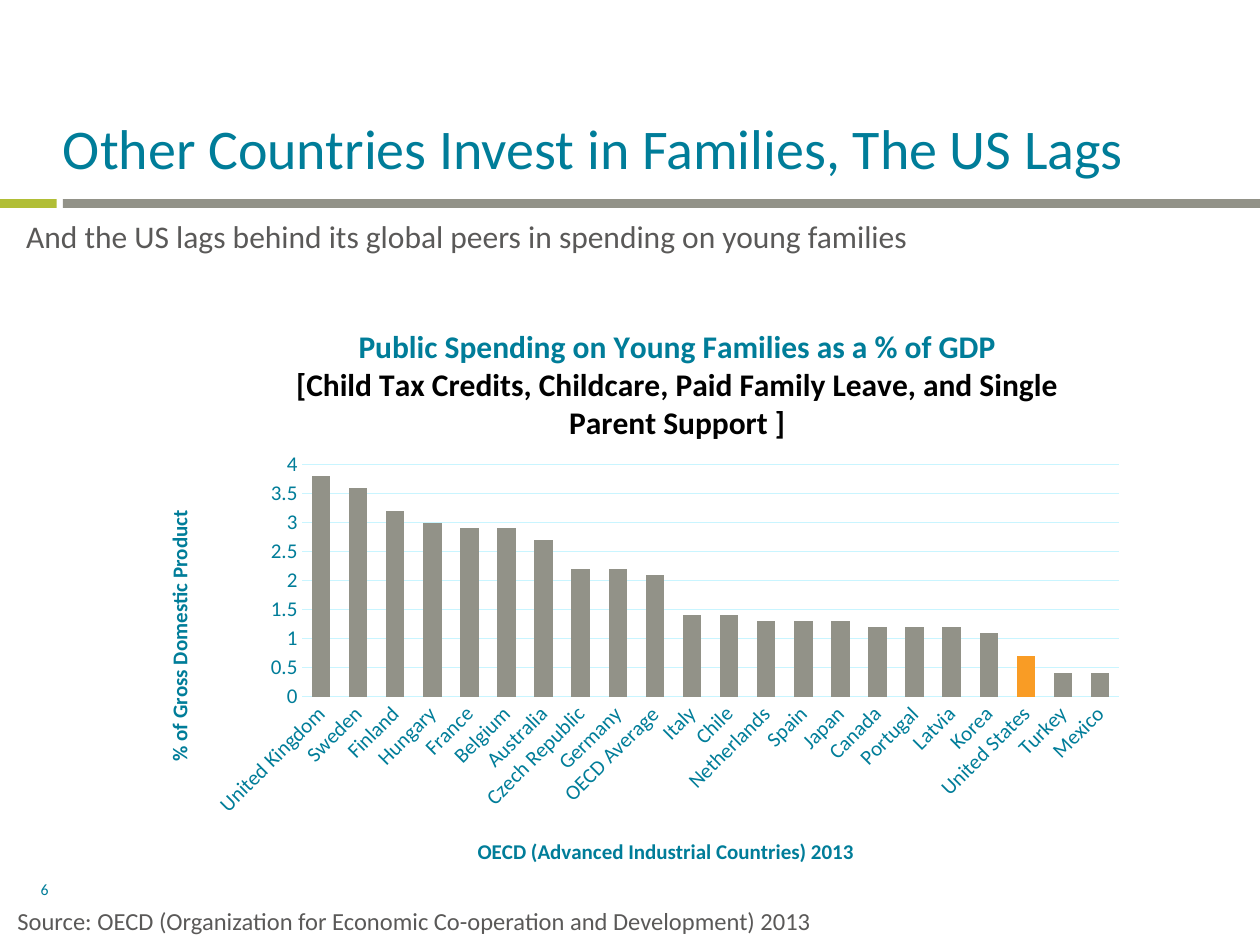
import pptx
import pptx.chart.data
import pptx.dml.color
import pptx.enum.chart
import pptx.enum.shapes
import pptx.enum.text
import pptx.oxml
import pptx.oxml.ns
import pptx.util

RGB = pptx.dml.color.RGBColor
TEAL = RGB(0x00, 0x7D, 0x99)
GRAY = RGB(0x92, 0x92, 0x88)
GREEN = RGB(0xB1, 0xBE, 0x36)
ORANGE = RGB(0xF9, 0x9C, 0x25)
DARK = RGB(0x5A, 0x59, 0x58)
PALE = RGB(0xC9, 0xF5, 0xFF)
BLACK = RGB(0, 0, 0)
FONT = "Calibri"
WIDTH, HEIGHT = 10, 7.5
MARGIN = 0.5

SPENDING = {
    "United Kingdom": 3.8, "Sweden": 3.6, "Finland": 3.2, "Hungary": 3.0,
    "France": 2.9, "Belgium": 2.9, "Australia": 2.7, "Czech Republic": 2.2,
    "Germany": 2.2, "OECD Average": 2.1, "Italy": 1.4, "Chile": 1.4,
    "Netherlands": 1.3, "Spain": 1.3, "Japan": 1.3, "Canada": 1.2,
    "Portugal": 1.2, "Latvia": 1.2, "Korea": 1.1, "United States": 0.7,
    "Turkey": 0.4, "Mexico": 0.4,
}
HIGHLIGHT = "United States"


def inches(box):
    return [pptx.util.Inches(length) for length in box]


def style(font, size, color, bold=False):
    font.name = FONT
    font.size = pptx.util.Pt(size)
    font.color.rgb = color
    font.bold = bold


def add_text(slide, box, text, size, color, inset=True,
             anchor=pptx.enum.text.MSO_ANCHOR.TOP):
    frame = slide.shapes.add_textbox(*inches(box)).text_frame
    frame.word_wrap = True
    frame.vertical_anchor = anchor
    if not inset:
        frame.margin_left = frame.margin_right = 0
        frame.margin_top = frame.margin_bottom = 0
    frame.text = text
    style(frame.paragraphs[0].runs[0].font, size, color)
    return frame.paragraphs[0]


def add_rule(slide, box):
    """Divider with a green tab in the margin and a gray bar beside it."""
    left, top, width, height = box
    for x, length, color in ((left, MARGIN - 0.05, GREEN),
                             (left + MARGIN, width - MARGIN, GRAY)):
        bar = slide.shapes.add_shape(pptx.enum.shapes.MSO_SHAPE.RECTANGLE,
                                     *inches((x, top, length, height)))
        bar.shadow.inherit = False
        bar.fill.solid()
        bar.fill.fore_color.rgb = color
        bar.line.fill.background()


def set_layout(element, index, **shares):
    """Fix a chart part's place, in shares of the chart's size."""
    layout = element.find(pptx.oxml.ns.qn("c:layout"))
    if layout is not None:
        element.remove(layout)
    target = '<c:layoutTarget val="inner"/>' if "w" in shares else ""
    modes = "".join(f'<c:{key}Mode val="edge"/>' for key in "xy")
    values = "".join(f'<c:{key} val="{share}"/>' for key, share in shares.items())
    element.insert(index, pptx.oxml.parse_xml(
        f'<c:layout {pptx.oxml.ns.nsdecls("c")}><c:manualLayout>'
        f'{target}{modes}{values}</c:manualLayout></c:layout>'))


def set_title(title, lines, size, colors, x, y):
    frame = title.text_frame
    frame.text = lines[0]
    for line in lines[1:]:
        frame.add_paragraph().text = line
    for paragraph, color in zip(frame.paragraphs, colors):
        style(paragraph.runs[0].font, size, color, bold=True)
    set_layout(title.element, 1, x=x, y=y)
    return frame


def style_axis(axis):
    axis.major_tick_mark = axis.minor_tick_mark = pptx.enum.chart.XL_TICK_MARK.NONE
    style(axis.tick_labels.font, 12, TEAL)


def set_line(line):
    line.color.rgb = PALE
    line.width = pptx.util.Pt(0.75)


def add_spending_chart(slide, box):
    data = pptx.chart.data.CategoryChartData()
    data.categories = list(SPENDING)
    data.add_series("Series 1", list(SPENDING.values()))
    chart = slide.shapes.add_chart(
        pptx.enum.chart.XL_CHART_TYPE.COLUMN_CLUSTERED, *inches(box), data).chart
    style(chart.font, 10, BLACK)
    chart.has_legend = False
    set_title(chart.chart_title,
              ["Public Spending on Young Families as a % of GDP",
               "[Child Tax Credits, Childcare, Paid Family Leave, and Single "
               "Parent Support ]"], 18, (TEAL, BLACK), 0.16, 0.05)

    countries = chart.category_axis
    style_axis(countries)
    set_line(countries.format.line)
    countries.tick_labels.font._element.getparent().getparent().getparent()
    labels = countries._element.find(pptx.oxml.ns.qn("c:txPr"))
    labels.find(pptx.oxml.ns.qn("a:bodyPr")).set("rot", "-2700000")
    set_title(countries.axis_title, ["OECD (Advanced Industrial Countries) 2013"],
              12, (TEAL,), 0.34, 0.91)

    percent = chart.value_axis
    style_axis(percent)
    percent.minimum_scale, percent.maximum_scale = 0, 4
    percent.major_unit = 0.5
    percent.tick_labels.number_format = "General"
    percent.tick_labels.number_format_is_linked = False
    percent.format.line.fill.background()
    set_line(percent.major_gridlines.format.line)
    frame = set_title(percent.axis_title, ["% of Gross Domestic Product"],
                      12, (TEAL,), 0.03, 0.36)
    frame._txBody.bodyPr.set("rot", "-5400000")

    plot = chart.plots[0]
    plot.gap_width, plot.overlap = 100, -24
    plot.vary_by_categories = False
    series = plot.series[0]
    highlighted = series.points[list(SPENDING).index(HIGHLIGHT)]
    for bars, color in ((series, GRAY), (highlighted, ORANGE)):
        bars.format.fill.solid()
        bars.format.fill.fore_color.rgb = color
    plot_area = chart._chartSpace.chart.plotArea
    set_layout(plot_area, 0, x=0.17, y=0.29, w=0.81, h=0.39)


def main():
    deck = pptx.Presentation()
    deck.slide_width, deck.slide_height = inches((WIDTH, HEIGHT))
    slide = deck.slides.add_slide(deck.slide_layouts[6])
    anchors = pptx.enum.text.MSO_ANCHOR

    add_rule(slide, (0, 1.58, WIDTH, 0.07))
    number = add_text(slide, (0.28, 6.96, 0.15, 0.19), "6", 9, TEAL,
                      inset=False, anchor=anchors.MIDDLE)
    number.alignment = pptx.enum.text.PP_ALIGN.CENTER
    headline = add_text(slide, (MARGIN, 0.36, WIDTH - 2 * MARGIN, 1.08),
                        "Other Countries Invest in Families, The US Lags",
                        32, TEAL, inset=False, anchor=anchors.BOTTOM)
    headline.line_spacing = 0.9
    add_spending_chart(slide, (1.04, 2.32, 0.8 * WIDTH, 4.72))
    add_text(slide, (0.04, 7.14, WIDTH - 0.04, 0.34),
             "Source: OECD (Organization for Economic Co-operation and "
             "Development) 2013", 14, DARK)
    add_text(slide, (0.11, 1.67, WIDTH - 0.11, 0.4),
             "And the US lags behind its global peers in spending on young "
             "families", 18, DARK)
    deck.save("out.pptx")


if __name__ == "__main__":
    main()
